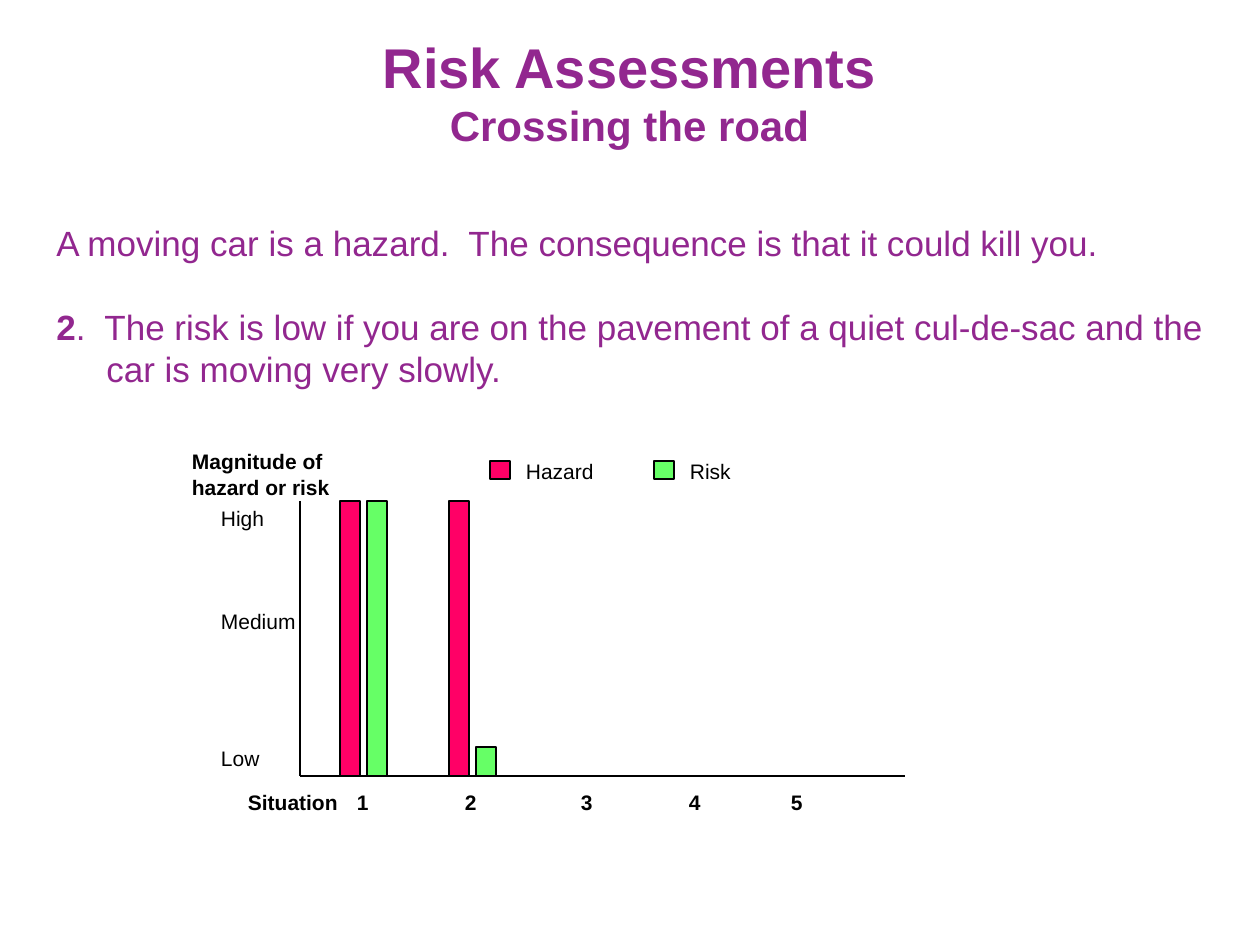
import pptx
import pptx.dml.color
import pptx.enum.shapes
import pptx.enum.text
import pptx.util
import lxml.etree

PURPLE, BLACK = "92278F", "000000"
COLOURS = {"Hazard": "FF0066", "Risk": "66FF66"}
TITLE = [[("Risk Assessments", 32, True)], [("Crossing the road", 24, True)]]
BODY = [
    [("A moving car is a hazard.  The consequence is that it could kill you.", 20, False)],
    [("2", 20, True),
     (".  The risk is low if you are on the pavement of a quiet cul-de-sac "
      "and the car is moving very slowly.", 20, False)],
]
LEVELS = [("High", 501, 86), ("Medium", 604, 118), ("Low", 741, 81)]
SITUATIONS = [("1", 348), ("2", 456), ("3", 572), ("4", 680), ("5", 782)]
BAR_HEIGHTS = [{"Hazard": 275, "Risk": 275}, {"Hazard": 275, "Risk": 29}]
LEGEND = [("Hazard", 490, 111), ("Risk", 654, 83)]

AXIS_LEFT, AXIS_RIGHT, AXIS_TOP, BASELINE = 300, 905, 501, 776
FIRST_BAR, SITUATION_STEP, SERIES_STEP, BAR_WIDTH = 340, 109, 27, 20
LABEL_HEIGHT, LABEL_TOP, LEGEND_TOP = 30, 785, 455


def px(count):
    return pptx.util.Emu(count * 914400 // 126)


def colour(value):
    return pptx.dml.color.RGBColor.from_string(value)


def write(box, paragraphs, fill=BLACK, align=None, wrap=True, inset=None, hanging=0, gap=0):
    frame = box.text_frame
    frame.word_wrap = wrap
    frame.auto_size = pptx.enum.text.MSO_AUTO_SIZE.NONE
    frame.vertical_anchor = pptx.enum.text.MSO_ANCHOR.TOP
    if inset:
        frame.margin_left = frame.margin_right = px(inset[0])
        frame.margin_top = frame.margin_bottom = px(inset[1])
    for index, spans in enumerate(paragraphs):
        para = frame.add_paragraph() if index else frame.paragraphs[0]
        para.alignment = align
        if hanging:
            properties = para._p.get_or_add_pPr()
            properties.set("marL", str(px(hanging)))
            properties.set("indent", str(-px(hanging)))
        if index and gap:
            para.space_before = pptx.util.Pt(gap)
        for text, size, bold in spans:
            span = para.add_run()
            span.text = text
            span.font.name = "Arial"
            span.font.size = pptx.util.Pt(size)
            span.font.bold = bold
            span.font.color.rgb = colour(fill)


def add_label(page, lines, left, top, width, height=LABEL_HEIGHT, bold=False):
    box = page.shapes.add_textbox(px(left), px(top), px(width), px(height))
    write(box, [[(line, 12, bold)] for line in lines], inset=(9, 4))


def add_bar(page, series, left, top, height):
    bar = page.shapes.add_shape(pptx.enum.shapes.MSO_SHAPE.RECTANGLE,
                                px(left), px(top), px(BAR_WIDTH), px(height))
    bar.shadow.inherit = False
    bar.fill.solid()
    bar.fill.fore_color.rgb = colour(COLOURS[series])
    bar.line.color.rgb = colour(BLACK)
    bar.line.width = pptx.util.Pt(0.75)


def add_axis(page, *ends):
    axis = page.shapes.add_connector(pptx.enum.shapes.MSO_CONNECTOR.STRAIGHT,
                                     *[px(end) for end in ends])
    axis.line.color.rgb = colour(BLACK)
    axis.line.width = pptx.util.Pt(0.75)
    lxml.etree.SubElement(axis._element.spPr, pptx.oxml.ns.qn("a:effectLst"))


def main():
    deck = pptx.Presentation()
    deck.slide_width, deck.slide_height = px(1260), px(945)
    page = deck.slides.add_slide(deck.slide_layouts[5])

    title = page.shapes.title
    title.left, title.top, title.width, title.height = px(370), px(26), px(519), px(130)
    write(title, TITLE, fill=PURPLE, align=pptx.enum.text.PP_ALIGN.CENTER, wrap=False)
    body = page.shapes.add_textbox(px(44), px(215), px(1211), px(218))
    write(body, BODY, fill=PURPLE, hanging=50, gap=24)

    add_axis(page, AXIS_LEFT, AXIS_TOP, AXIS_LEFT, BASELINE)
    add_axis(page, AXIS_LEFT, BASELINE, AXIS_RIGHT, BASELINE)
    add_label(page, ["Magnitude of", "hazard or risk"], 183, 445, 189, 52, bold=True)
    for level, top, width in LEVELS:
        add_label(page, [level], 212, top, width)
    add_label(page, ["Situation"], 239, LABEL_TOP, 127, bold=True)
    for number, left in SITUATIONS:
        add_label(page, [number], left, LABEL_TOP, 29, bold=True)

    for situation, heights in enumerate(BAR_HEIGHTS):
        for position, (series, height) in enumerate(heights.items()):
            left = FIRST_BAR + situation * SITUATION_STEP + position * SERIES_STEP
            add_bar(page, series, left, BASELINE - height, height)
    for series, left, width in LEGEND:
        add_bar(page, series, left, LEGEND_TOP + 6, 18)
        add_label(page, [series], left + SERIES_STEP, LEGEND_TOP, width)

    deck.save("out.pptx")


if __name__ == "__main__":
    main()
